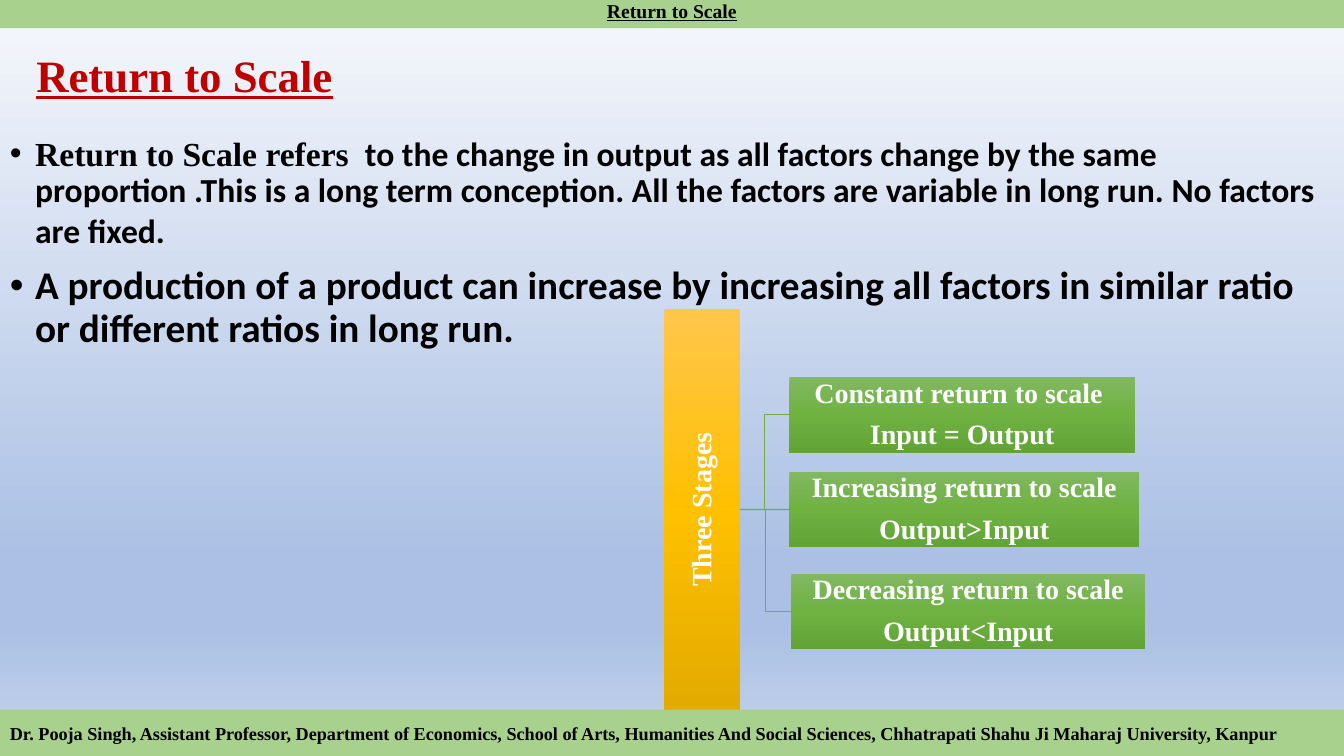
from dataclasses import dataclass
from typing import Any, NamedTuple

from lxml.etree import SubElement
from pptx import Presentation
from pptx.dml.color import RGBColor
from pptx.enum.shapes import MSO_CONNECTOR as Link, MSO_SHAPE as Preset
from pptx.enum.text import MSO_ANCHOR as Anchor, MSO_AUTO_SIZE as AutoSize, PP_ALIGN as Align
from pptx.oxml.ns import qn
from pptx.util import Inches, Pt

SLIDE_WIDTH, SLIDE_HEIGHT = Inches(13.333), Inches(7.5)
RIGHT_SIDE, LEFT_SIDE = 3, 1
Gradient = tuple[tuple[int, str], ...]


@dataclass(frozen=True)
class Theme:
    serif: str = "Times New Roman"
    sans: str = "Calibri"
    ink: str = "000000"
    paper: str = "FFFFFF"
    heading: str = "C00000"
    band: str = "A9D18E"
    link: str = "70AD47"
    sky: Gradient = ((0, "F6F8FC"), (74, "ABC0E4"), (83, "ABC0E4"), (100, "C7D5ED"))
    gold: Gradient = ((0, "FFC64B"), (50, "FFC000"), (100, "E3AB00"))
    green: Gradient = ((0, "81B861"), (50, "6FB242"), (100, "62A336"))
    title_size: int = 32
    point_size: int = 28
    definition_size: int = 24
    stage_size: int = 20
    header_size: int = 14
    footer_size: int = 13


THEME = Theme()


class Area(NamedTuple):
    """Left and width in percent of slide width, top and height in percent of its height."""
    left: float
    top: float
    width: float
    height: float

    def box(self) -> tuple[int, int, int, int]:
        return (round(self.left * SLIDE_WIDTH / 100), round(self.top * SLIDE_HEIGHT / 100),
                round(self.width * SLIDE_WIDTH / 100), round(self.height * SLIDE_HEIGHT / 100))


class Span(NamedTuple):
    text: str
    size: int
    font: str = THEME.serif
    color: str = THEME.ink
    bold: bool = True
    underline: bool = False


class Stage(NamedTuple):
    lines: tuple[str, ...]
    area: Area
    gradient: Gradient = THEME.green


class Band(NamedTuple):
    span: Span
    area: Area
    anchor: Anchor
    align: Align


TITLE = Span("Return to Scale", THEME.title_size, color=THEME.heading, underline=True)
TITLE_AREA = Area(1.95, 5.33, 25.2, 10)
POINTS_AREA = Area(0, 17.47, 98.65, 77.2)
POINTS = (
    (Span("Return to Scale refers ", THEME.definition_size),
     Span(" to the change in output as all factors change by the same proportion .This is a "
          "long term conception. All the factors are variable in long run. No factors are fixed.",
          THEME.definition_size, THEME.sans),
     Span(" ", THEME.point_size, THEME.sans, bold=False)),
    (Span("A production of a product can increase by increasing all factors in similar ratio "
          "or different ratios in long run.", THEME.point_size, THEME.sans),),
)
ROOT = Stage(("Three Stages",), Area(49.43, 40.93, 5.63, 52.93), THEME.gold)
STAGES = (
    Stage(("Constant return to scale ", "Input = Output"), Area(58.73, 49.87, 25.73, 10)),
    Stage(("Increasing return to scale", "Output>Input"), Area(58.73, 62.4, 26.03, 10)),
    Stage(("Decreasing return to scale", "Output<Input"), Area(58.88, 75.87, 26.33, 10)),
)
BANDS = (
    Band(Span("Dr. Pooja Singh, Assistant Professor, Department of Economics, School of Arts, "
              "Humanities And Social Sciences, Chhatrapati Shahu Ji Maharaj University, Kanpur",
              THEME.footer_size),
         Area(0, 93.87, 100, 6.13), Anchor.MIDDLE, Align.LEFT),
    Band(Span("Return to Scale", THEME.header_size, underline=True),
         Area(0, -0.8, 100, 4.53), Anchor.TOP, Align.CENTER),
)

STAGE_FRAME = {"word_wrap": True, "vertical_anchor": Anchor.MIDDLE,
               **{f"margin_{side}": Inches(0.01) for side in ("left", "right", "top", "bottom")}}
STAGE_PARAGRAPH = {"alignment": Align.CENTER, "line_spacing": 0.9, "space_after": Pt(8)}
POINT_PARAGRAPH = {"alignment": Align.LEFT, "line_spacing": 0.9, "space_before": Pt(10)}


def apply_format(target: Any, values: dict[str, Any]) -> None:
    for name, value in values.items():
        setattr(target, name, value)


def paint_gradient(fill: Any, element: Any, stops: Gradient) -> None:
    """Fill from top to bottom; element is the XML that holds the fill."""
    fill.gradient()
    fill.gradient_angle = 270
    stop_list = element.xpath(".//a:gsLst")[0]
    for old_stop in list(stop_list):
        stop_list.remove(old_stop)
    for percent, color in stops:
        stop = SubElement(stop_list, qn("a:gs"), pos=str(percent * 1000))
        SubElement(stop, qn("a:srgbClr"), val=color)


def write_paragraphs(frame: Any, paragraphs: Any, values: dict[str, Any]) -> None:
    for index, spans in enumerate(paragraphs):
        paragraph = frame.add_paragraph() if index else frame.paragraphs[0]
        apply_format(paragraph, values)
        for span in spans:
            run = paragraph.add_run()
            run.text = span.text
            apply_format(run.font, {"name": span.font, "size": Pt(span.size),
                                    "bold": span.bold, "underline": span.underline})
            run.font.color.rgb = RGBColor.from_string(span.color)


def add_rectangle(slide: Any, area: Area) -> Any:
    rectangle = slide.shapes.add_shape(Preset.RECTANGLE, *area.box())
    rectangle.shadow.inherit = False
    rectangle.line.fill.background()
    return rectangle


def add_title(slide: Any) -> None:
    title = slide.shapes.title
    apply_format(title, dict(zip(("left", "top", "width", "height"), TITLE_AREA.box())))
    apply_format(title.text_frame, {"word_wrap": True, "auto_size": AutoSize.NONE,
                                    "vertical_anchor": Anchor.MIDDLE})
    write_paragraphs(title.text_frame, [[TITLE]], {"alignment": Align.LEFT, "line_spacing": 0.9})


def add_points(slide: Any) -> None:
    frame = slide.shapes.add_textbox(*POINTS_AREA.box()).text_frame
    frame.word_wrap = True
    write_paragraphs(frame, POINTS, POINT_PARAGRAPH)
    for paragraph in frame.paragraphs:
        properties = paragraph._p.get_or_add_pPr()
        properties.set("marL", str(Inches(0.25)))
        properties.set("indent", str(-Inches(0.25)))
        SubElement(properties, qn("a:buFont"), typeface="Arial")
        SubElement(properties, qn("a:buChar"), char="•")


def add_stage(slide: Any, stage: Stage) -> Any:
    rectangle = add_rectangle(slide, stage.area)
    paint_gradient(rectangle.fill, rectangle._element, stage.gradient)
    apply_format(rectangle.text_frame, STAGE_FRAME)
    lines = [[Span(line, THEME.stage_size, color=THEME.paper)] for line in stage.lines]
    write_paragraphs(rectangle.text_frame, lines, STAGE_PARAGRAPH)
    return rectangle


def link_stages(slide: Any, root: Any, branch: Any, kind: Link) -> None:
    connector = slide.shapes.add_connector(kind, 0, 0, 0, 0)
    connector.begin_connect(root, RIGHT_SIDE)
    connector.end_connect(branch, LEFT_SIDE)
    connector.line.color.rgb = RGBColor.from_string(THEME.link)
    connector.line.width = Pt(1)
    SubElement(connector._element.spPr, qn("a:effectLst"))


def add_band(slide: Any, band: Band) -> None:
    rectangle = add_rectangle(slide, band.area)
    rectangle.fill.solid()
    rectangle.fill.fore_color.rgb = RGBColor.from_string(THEME.band)
    apply_format(rectangle.text_frame, {"word_wrap": True, "vertical_anchor": band.anchor})
    write_paragraphs(rectangle.text_frame, [[band.span]], {"alignment": band.align})


def main() -> None:
    deck = Presentation()
    apply_format(deck, {"slide_width": SLIDE_WIDTH, "slide_height": SLIDE_HEIGHT})
    slide = deck.slides.add_slide(deck.slide_layouts.get_by_name("Title Only"))
    paint_gradient(slide.background.fill, slide._element, THEME.sky)
    add_title(slide)
    add_points(slide)
    root = add_stage(slide, ROOT)
    root.text_frame._txBody.bodyPr.set("vert", "vert270")
    for stage, kind in zip(STAGES, (Link.ELBOW, Link.STRAIGHT, Link.ELBOW)):
        link_stages(slide, root, add_stage(slide, stage), kind)
    for band in BANDS:
        add_band(slide, band)
    deck.save("out.pptx")


if __name__ == "__main__":
    main()
